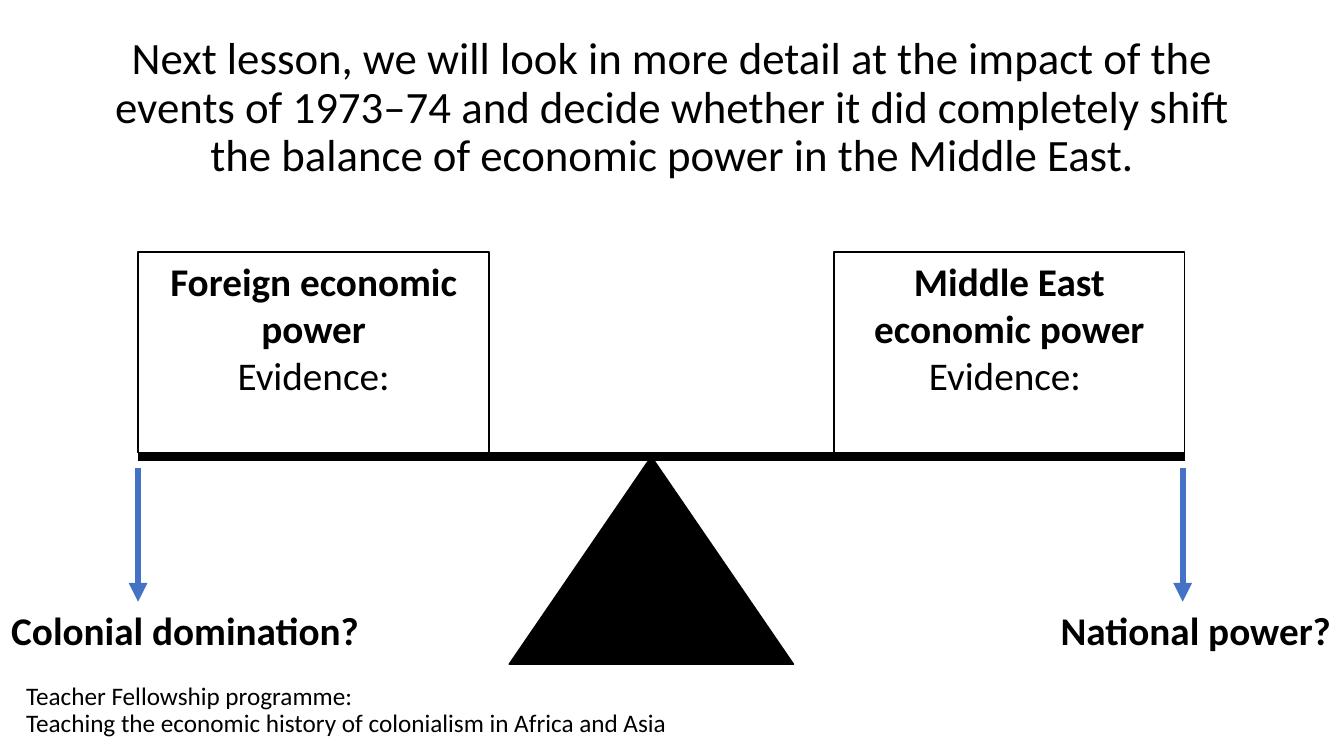
from pptx import Presentation
from pptx.dml.color import RGBColor
from pptx.enum import shapes, text
from pptx.oxml import ns
from pptx.util import Inches, Pt
from lxml import etree

TITLE = ("Next lesson, we will look in more detail at the impact of the events of "
         "1973–74 and decide whether it did completely shift the balance of "
         "economic power in the Middle East.")
FOOTER = ["Teacher Fellowship programme:",
          "Teaching the economic history of colonialism in Africa and Asia"]
SIDES = [
    {"weight": ["Foreign economic power", "Evidence:"], "outcome": "Colonial domination?"},
    {"weight": ["Middle East economic power", "Evidence: "], "outcome": "National power?"},
]
COLOURS = {"ink": "000000", "paper": "FFFFFF", "arrow": "4472C4"}
FONT = "Calibri"

WIDTH, HEIGHT = 13.33, 7.5
BEAM_LEFT, BEAM_RIGHT, BEAM_Y = 1.37, 11.75, 4.53
WEIGHT_WIDTH, WEIGHT_TOP, WEIGHT_HEIGHT = 3.48, 2.5, 1.99
PIVOT_LEFT, PIVOT_WIDTH, PIVOT_HEIGHT = 5.05, 2.82, 2.06
ARROW_TOP, OUTCOME_TOP, OUTCOME_HEIGHT = 4.64, 5.97, 0.57
OUTCOME_WIDTHS = [3.67, 2.94]
WEIGHT_LEFTS = [BEAM_LEFT, BEAM_RIGHT - WEIGHT_WIDTH]
ARROW_XS = [BEAM_LEFT, BEAM_RIGHT - 0.02]
OUTCOME_LEFTS = [0, WIDTH - OUTCOME_WIDTHS[1]]


def colour(name):
    return RGBColor.from_string(COLOURS[name])


def write(shape, lines, size, bold_lines=0, anchor="TOP", wrap=True,
          align="CENTER", spacing=1.0):
    """Fill a shape with paragraphs, the first bold_lines of them in bold."""
    frame = shape.text_frame
    frame.text = "\n".join(lines)
    frame_format = {"word_wrap": wrap, "auto_size": text.MSO_AUTO_SIZE.NONE,
                    "vertical_anchor": text.MSO_ANCHOR[anchor]}
    for name, value in frame_format.items():
        setattr(frame, name, value)
    for index, para in enumerate(frame.paragraphs):
        para.alignment = text.PP_ALIGN[align]
        para.line_spacing = spacing
        span_format = {"name": FONT, "size": Pt(size), "bold": index < bold_lines}
        for span in para.runs:
            for name, value in span_format.items():
                setattr(span.font, name, value)
            span.font.color.rgb = colour("ink")


def add_solid(page, kind, box, fill):
    shape = page.shapes.add_shape(shapes.MSO_SHAPE[kind], *map(Inches, box))
    shape.shadow.inherit = False
    shape.fill.solid()
    shape.fill.fore_color.rgb = colour(fill)
    shape.line.color.rgb = colour("ink")
    shape.line.width = Pt(1)
    return shape


def add_line(page, start, end, ink, width, arrow=False):
    line = page.shapes.add_connector(shapes.MSO_CONNECTOR.STRAIGHT,
                                     *map(Inches, start + end))
    line.line.color.rgb = colour(ink)
    line.line.width = Pt(width)
    properties = line._element.spPr
    etree.SubElement(properties, ns.qn("a:effectLst"))
    if arrow:
        etree.SubElement(properties.find(ns.qn("a:ln")), ns.qn("a:tailEnd"),
                         type="triangle")


def add_text(page, box, lines, size, **layout):
    write(page.shapes.add_textbox(*map(Inches, box)), lines, size, **layout)


def main():
    deck = Presentation()
    deck.slide_width, deck.slide_height = Inches(WIDTH), Inches(HEIGHT)
    page = deck.slides.add_slide(deck.slide_layouts.get_by_name("Title Only"))

    title = page.shapes.title
    place = {"left": 0.92, "top": 0.4, "width": 11.5, "height": 1.36}
    for name, value in place.items():
        setattr(title, name, Inches(value))
    write(title, [TITLE], 32, anchor="MIDDLE", spacing=0.9)
    add_text(page, (0.16, 6.64, 6.78, 0.82), FOOTER, 18,
             anchor="MIDDLE", align="LEFT", spacing=0.9)

    add_line(page, (BEAM_LEFT, BEAM_Y), (BEAM_RIGHT, BEAM_Y), "ink", 6)
    add_solid(page, "ISOSCELES_TRIANGLE",
              (PIVOT_LEFT, BEAM_Y, PIVOT_WIDTH, PIVOT_HEIGHT), "ink")

    for side, left, arrow_x, outcome_left, outcome_width in zip(
            SIDES, WEIGHT_LEFTS, ARROW_XS, OUTCOME_LEFTS, OUTCOME_WIDTHS):
        weight = add_solid(page, "RECTANGLE",
                           (left, WEIGHT_TOP, WEIGHT_WIDTH, WEIGHT_HEIGHT), "paper")
        write(weight, side["weight"], 28, bold_lines=1)
        add_line(page, (arrow_x, ARROW_TOP), (arrow_x, OUTCOME_TOP), "arrow", 4.5,
                 arrow=True)
        add_text(page, (outcome_left, OUTCOME_TOP, outcome_width, OUTCOME_HEIGHT),
                 [side["outcome"]], 28, bold_lines=1, wrap=False)

    deck.save("out.pptx")


if __name__ == "__main__":
    main()
